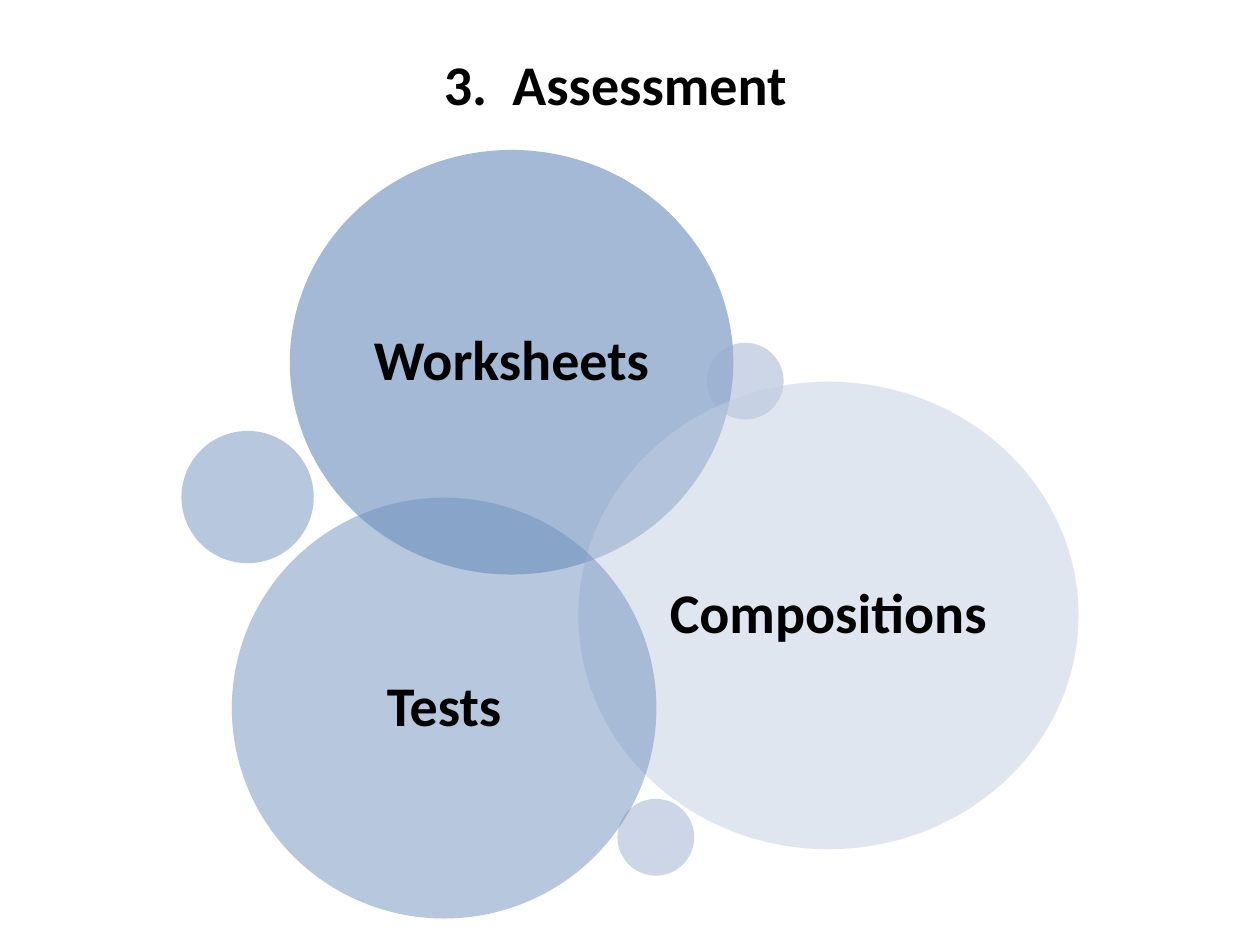
from lxml import etree
from pptx import Presentation
from pptx.dml.color import RGBColor
from pptx.enum import shapes, text
from pptx.oxml import ns
from pptx.util import Inches, Pt

COLORS = {
    "steel": "4875AC",
    "blue": "6F91BF",
    "light": "9AAFD0",
    "pale": "C3CEE2",
    "text": "000000",
}


def write_label(frame, label):
    frame.word_wrap = True
    frame.vertical_anchor = text.MSO_ANCHOR.MIDDLE
    frame.margin_left = frame.margin_right = Inches(0.13)
    frame.margin_top = frame.margin_bottom = Inches(0.13)
    paragraph = frame.paragraphs[0]
    paragraph.text = label
    paragraph.alignment = text.PP_ALIGN.CENTER
    paragraph.line_spacing = 0.9
    font = paragraph.font
    font.name = "Calibri"
    font.size = Pt(32)
    font.bold = True
    font.color.rgb = RGBColor.from_string(COLORS["text"])


prs = Presentation()
prs.slide_width, prs.slide_height = Inches(10), Inches(7.5)
slide = prs.slides.add_slide(prs.slide_layouts[5])

title = slide.shapes.title
title.left, title.top = Inches(2.21), Inches(0.29)
title.width, title.height = Inches(5.35), Inches(0.8)
write_label(title.text_frame, "3.  Assessment")

# Left, top, width, height, colour, label; from back to front
bubbles = [
    (2.3, 1.19, 3.52, 3.37, "steel", "Worksheets"),
    (1.44, 3.42, 1.05, 1.05, "blue", None),
    (5.61, 2.72, 0.61, 0.61, "light", None),
    (4.59, 3.03, 3.97, 3.71, "pale", "Compositions"),
    (4.9, 6.34, 0.61, 0.61, "light", None),
    (1.84, 3.95, 3.37, 3.34, "blue", "Tests"),
]
for left, top, width, height, color, label in bubbles:
    bubble = slide.shapes.add_shape(
        shapes.MSO_SHAPE.OVAL, Inches(left), Inches(top), Inches(width), Inches(height)
    )
    bubble.shadow.inherit = False
    bubble.line.fill.background()
    bubble.fill.solid()
    bubble.fill.fore_color.rgb = RGBColor.from_string(COLORS[color])
    fill_color = bubble.element.spPr.find(ns.qn("a:solidFill"))[0]
    etree.SubElement(fill_color, ns.qn("a:alpha"), val="50000")
    if label:
        write_label(bubble.text_frame, label)

prs.save("out.pptx")
